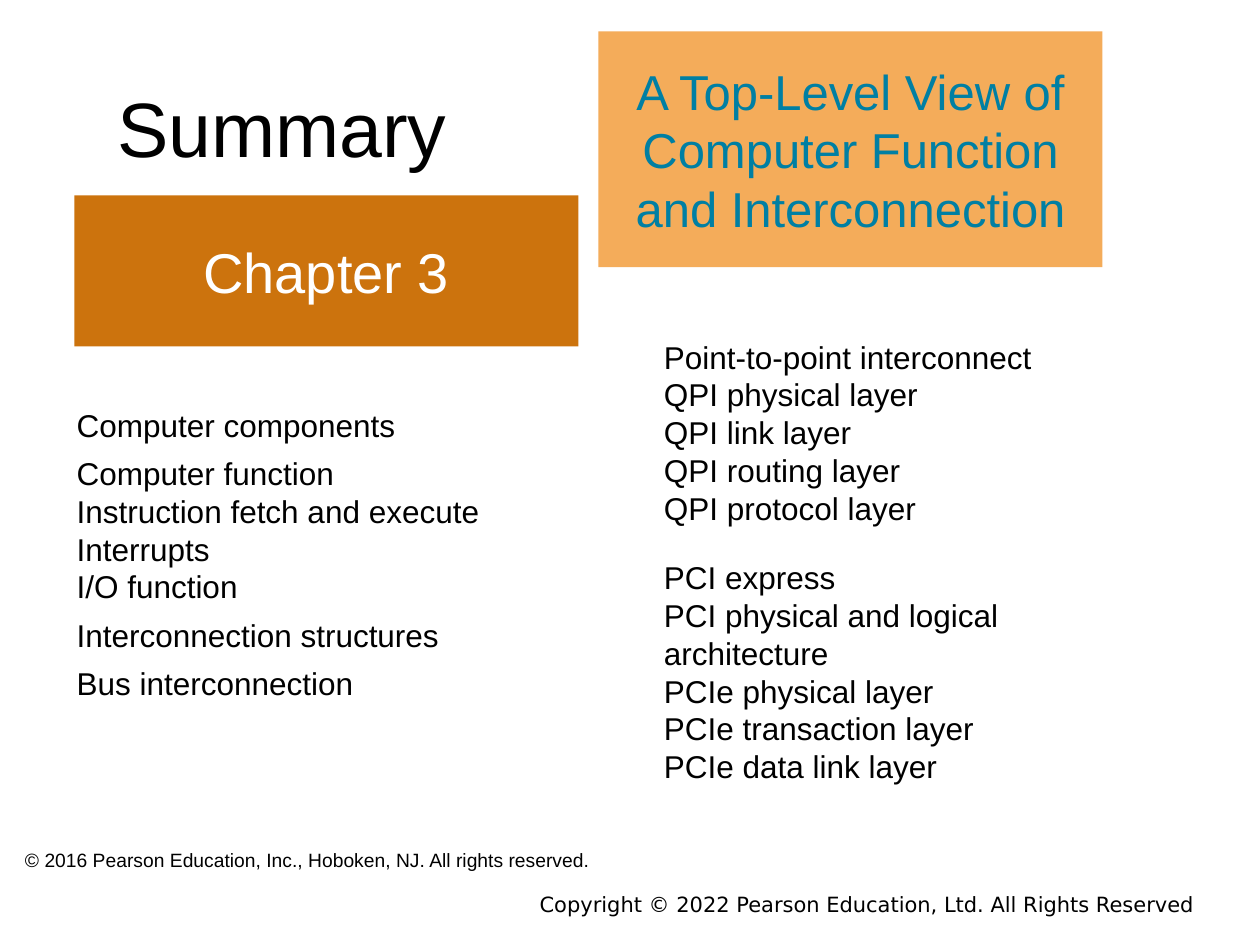
"""Builds the chapter 3 summary slide with its two topic columns."""
from dataclasses import dataclass

from pptx import Presentation
from pptx.dml.color import RGBColor as Rgb
from pptx.enum.shapes import MSO_SHAPE as Preset
from pptx.enum.text import MSO_ANCHOR as Anchor, PP_ALIGN as Align
from pptx.util import Inches, Pt


@dataclass(frozen=True)
class Theme:
    font: str = "Arial"
    footer_font: str = "DejaVu Sans"
    ink: str = "000000"
    white: str = "FFFFFF"
    teal: str = "007FA3"
    orange: str = "CC730D"
    light_orange: str = "F4AC5A"
    title_size: int = 44
    chapter_size: int = 32
    subject_size: int = 28
    body_size: int = 18
    footer_size: int = 12
    notice_size: int = 11


THEME = Theme()
TITLE = "Summary"
CHAPTER = "Chapter 3"
SUBJECT = "A Top-Level View of Computer Function and Interconnection"
NOTICE = "© 2016 Pearson Education, Inc., Hoboken, NJ. All rights reserved."
FOOTER = "Copyright © 2022 Pearson Education, Ltd. All Rights Reserved"
LEFT_TOPICS = [
    ("Computer components", []),
    ("Computer function", ["Instruction fetch and execute", "Interrupts", "I/O function"]),
    ("Interconnection structures", []),
    ("Bus interconnection", []),
]
RIGHT_TOPICS = [
    ("Point-to-point interconnect",
     ["QPI physical layer", "QPI link layer", "QPI routing layer", "QPI protocol layer"]),
    ("PCI express",
     ["PCI physical and logical architecture", "PCIe physical layer",
      "PCIe transaction layer", "PCIe data link layer"]),
]


def style(paragraph, size, color=THEME.ink, font=THEME.font, align=Align.LEFT):
    paragraph.alignment = align
    paragraph.font.name = font
    paragraph.font.size = Pt(size)
    paragraph.font.color.rgb = Rgb.from_string(color)


def prepare_frame(shape, anchor=Anchor.TOP, side=0.1, vertical=0.1):
    frame = shape.text_frame
    frame.word_wrap = True
    frame.vertical_anchor = anchor
    frame.margin_left = frame.margin_right = Inches(side)
    frame.margin_top = frame.margin_bottom = Inches(vertical)
    return frame


def write_line(shape, text, size, anchor=Anchor.TOP, vertical=0.1, **look):
    frame = prepare_frame(shape, anchor, vertical=vertical)
    frame.text = text
    style(frame.paragraphs[0], size, **look)


def add_box(slide, place):
    return slide.shapes.add_textbox(*map(Inches, place))


def add_topics(slide, place, topics, gap, indent=0.0):
    frame = prepare_frame(add_box(slide, place), side=0.1)
    frame.margin_left = Inches(0.1 + indent)
    for index, (topic, details) in enumerate(topics):
        for level, text in [(0, topic)] + [(1, detail) for detail in details]:
            first = index == 0 and level == 0
            paragraph = frame.paragraphs[0] if first else frame.add_paragraph()
            paragraph.text = text
            paragraph.space_before = Pt(0 if first or level else gap)
            style(paragraph, THEME.body_size)


def add_banner(slide, place, fill, text, size, color):
    banner = slide.shapes.add_shape(Preset.RECTANGLE, *map(Inches, place))
    banner.shadow.inherit = False
    banner.fill.solid()
    banner.fill.fore_color.rgb = Rgb.from_string(fill)
    banner.line.fill.background()
    write_line(banner, text, size, Anchor.MIDDLE, 0, color=color, align=Align.CENTER)


def main():
    presentation = Presentation()
    presentation.slide_width, presentation.slide_height = Inches(10), Inches(7.5)
    slide = presentation.slides.add_slide(presentation.slide_layouts[5])

    title = slide.shapes.title
    title.left, title.top, title.width, title.height = map(Inches, (0.83, 0.25, 3.75, 1.22))
    write_line(title, TITLE, THEME.title_size, Anchor.BOTTOM)

    add_topics(slide, (0.51, 3.12, 4, 4.75), LEFT_TOPICS, gap=6)
    add_topics(slide, (4.92, 2.58, 4.17, 5.17), RIGHT_TOPICS, gap=18, indent=0.25)

    add_banner(slide, (0.59, 1.55, 4, 1.2), THEME.orange,
               CHAPTER, THEME.chapter_size, THEME.white)
    add_banner(slide, (4.75, 0.25, 4, 1.87), THEME.light_orange,
               SUBJECT, THEME.subject_size, THEME.teal)

    write_line(add_box(slide, (0.1, 6.75, 9.4, 0.26)), NOTICE, THEME.notice_size, Anchor.BOTTOM)
    write_line(add_box(slide, (1.75, 7.03, 7.83, 0.22)), FOOTER, THEME.footer_size,
               vertical=0.05, font=THEME.footer_font, align=Align.RIGHT)
    presentation.save("out.pptx")


if __name__ == "__main__":
    main()
